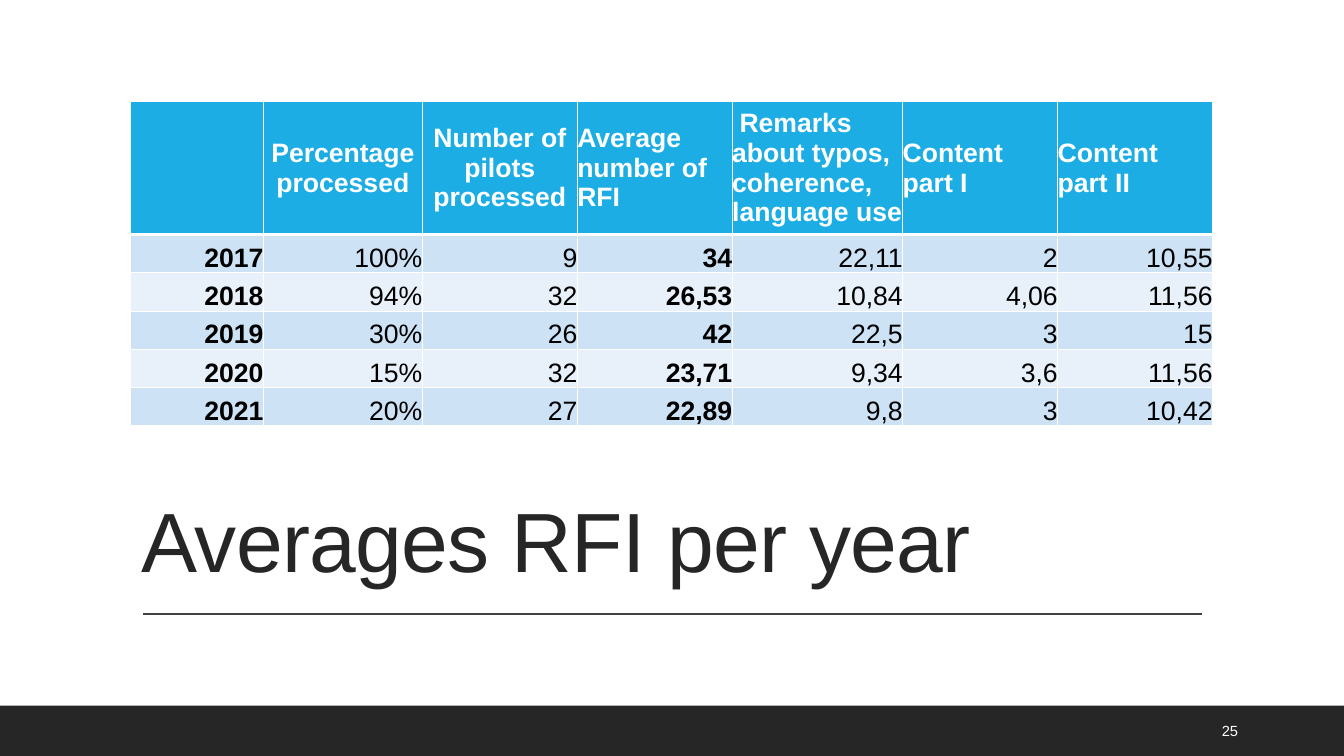
from dataclasses import dataclass

from lxml import etree
from pptx import Presentation
from pptx.dml.color import RGBColor
from pptx.enum.shapes import MSO_CONNECTOR, MSO_SHAPE
from pptx.enum.text import MSO_ANCHOR, MSO_AUTO_SIZE, PP_ALIGN
from pptx.oxml.ns import qn
from pptx.util import Inches, Pt

LEFT, MID, RIGHT = PP_ALIGN.LEFT, PP_ALIGN.CENTER, PP_ALIGN.RIGHT
CENTRE, BOTTOM = MSO_ANCHOR.MIDDLE, MSO_ANCHOR.BOTTOM
RECT, STRAIGHT = MSO_SHAPE.RECTANGLE, MSO_CONNECTOR.STRAIGHT
NO_FIT = MSO_AUTO_SIZE.NONE
WIDE, HIGH = Inches(13.33), Inches(7.5)
FONT = "Arial"
WHITE, BLACK, DARK, GREY = "FFFFFF", "000000", "262626", "404040"
BLUE, BANDS = "1CADE4", ("CDE3F5", "E8F1FA")
HEAD_ROW, BODY_ROW = 17.6, 5.07


@dataclass
class Column:
    head: str
    share: float
    align: PP_ALIGN
    bold: bool
    values: tuple[str, ...]


COLUMNS = [
    Column("", 9.87, LEFT, True, ("2017", "2018", "2019", "2020", "2021")),
    Column("Percentage processed", 11.83, MID, False,
           ("100%", "94%", "30%", "15%", "20%")),
    Column("Number of pilots processed", 11.53, MID, False,
           ("9", "32", "26", "32", "27")),
    Column("Average number of RFI", 11.53, LEFT, True,
           ("34", "26,53", "42", "23,71", "22,89")),
    Column(" Remarks about typos, coherence, language use", 12.69, LEFT, False,
           ("22,11", "10,84", "22,5", "9,34", "9,8")),
    Column("Content\vpart I", 11.53, LEFT, False,
           ("2", "4,06", "3", "3,6", "3")),
    Column("Content\vpart II", 11.53, LEFT, False,
           ("10,55", "11,56", "15", "11,56", "10,42")),
]


def across(share: float) -> int:
    return round(WIDE * share / 100)


def down(share: float) -> int:
    return round(HIGH * share / 100)


def frame(left: float, top: float, width: float, height: float) -> tuple:
    return across(left), down(top), across(width), down(height)


def paint(target, tone: str) -> None:
    target.rgb = RGBColor.from_string(tone)


def style(line, size: float, tone: str, bold: bool = False) -> None:
    for run in line.runs:
        run.font.name = FONT
        run.font.size = Pt(size)
        run.font.bold = bold
        paint(run.font.color, tone)


def edge(cell, side: str, width: float) -> None:
    props = cell._tc.get_or_add_tcPr()
    line = etree.SubElement(props, qn("a:ln" + side), w=str(Pt(width)))
    fill = etree.SubElement(line, qn("a:solidFill"))
    etree.SubElement(fill, qn("a:srgbClr"), val=WHITE)


def draw_cell(cell, row: int, col: Column) -> None:
    header = row == 0
    cell.text = col.head if header else col.values[row - 1]
    cell.margin_left = cell.margin_right = 0
    cell.margin_top = cell.margin_bottom = 0
    cell.vertical_anchor = CENTRE if header else BOTTOM
    line = cell.text_frame.paragraphs[0]
    line.alignment = col.align if header else RIGHT
    style(line, 19, WHITE if header else BLACK, header or col.bold)
    for side in "LRTB":
        thick = (row, side) in ((0, "B"), (1, "T"))
        edge(cell, side, 3 if thick else 1)
    cell.fill.solid()
    paint(cell.fill.fore_color, BLUE if header else BANDS[(row - 1) % 2])


def draw_table(slide) -> None:
    count = len(COLUMNS[0].values)
    width = sum(col.share for col in COLUMNS)
    area = frame(9.73, 13.43, width, HEAD_ROW + count * BODY_ROW)
    table = slide.shapes.add_table(count + 1, len(COLUMNS), *area).table
    for row, band in enumerate(table.rows):
        band.height = down(BODY_ROW if row else HEAD_ROW)
    for place, col in enumerate(COLUMNS):
        table.columns[place].width = across(col.share)
        for row in range(count + 1):
            draw_cell(table.cell(row, place), row, col)


def draw_title(slide) -> None:
    title = slide.shapes.title
    title.left, title.top, title.width, title.height = frame(
        9.75, 63.73, 80.57, 15.07)
    text = title.text_frame
    text.text = "Averages RFI per year"
    text.auto_size = NO_FIT
    text.vertical_anchor = BOTTOM
    line = text.paragraphs[0]
    line.alignment = LEFT
    line.line_spacing = 0.9
    style(line, 60, DARK)
    line.runs[0].font._element.set("spc", "-50")


def draw_rule(slide) -> None:
    level = down(81.2)
    rule = slide.shapes.add_connector(
        STRAIGHT, across(10.65), level, across(89.42), level)
    rule.line.width = Pt(1)
    paint(rule.line.color, GREY)
    etree.SubElement(rule._element.spPr, qn("a:effectLst"))


def draw_footer(slide) -> None:
    bar = slide.shapes.add_shape(RECT, *frame(0, 93.33, 100, 6.67))
    bar.shadow.inherit = False
    bar.fill.solid()
    paint(bar.fill.fore_color, DARK)
    bar.line.fill.background()
    text = slide.shapes.add_textbox(*frame(90.17, 94, 6.38, 5.33)).text_frame
    text.word_wrap = True
    text.vertical_anchor = CENTRE
    text.text = "25"
    line = text.paragraphs[0]
    line.space_after = Pt(6)
    style(line, 10.5, WHITE)


def main() -> None:
    deck = Presentation()
    deck.slide_width, deck.slide_height = WIDE, HIGH
    slide = deck.slides.add_slide(deck.slide_layouts[5])
    draw_title(slide)
    draw_rule(slide)
    draw_footer(slide)
    draw_table(slide)
    deck.save("out.pptx")


if __name__ == "__main__":
    main()
